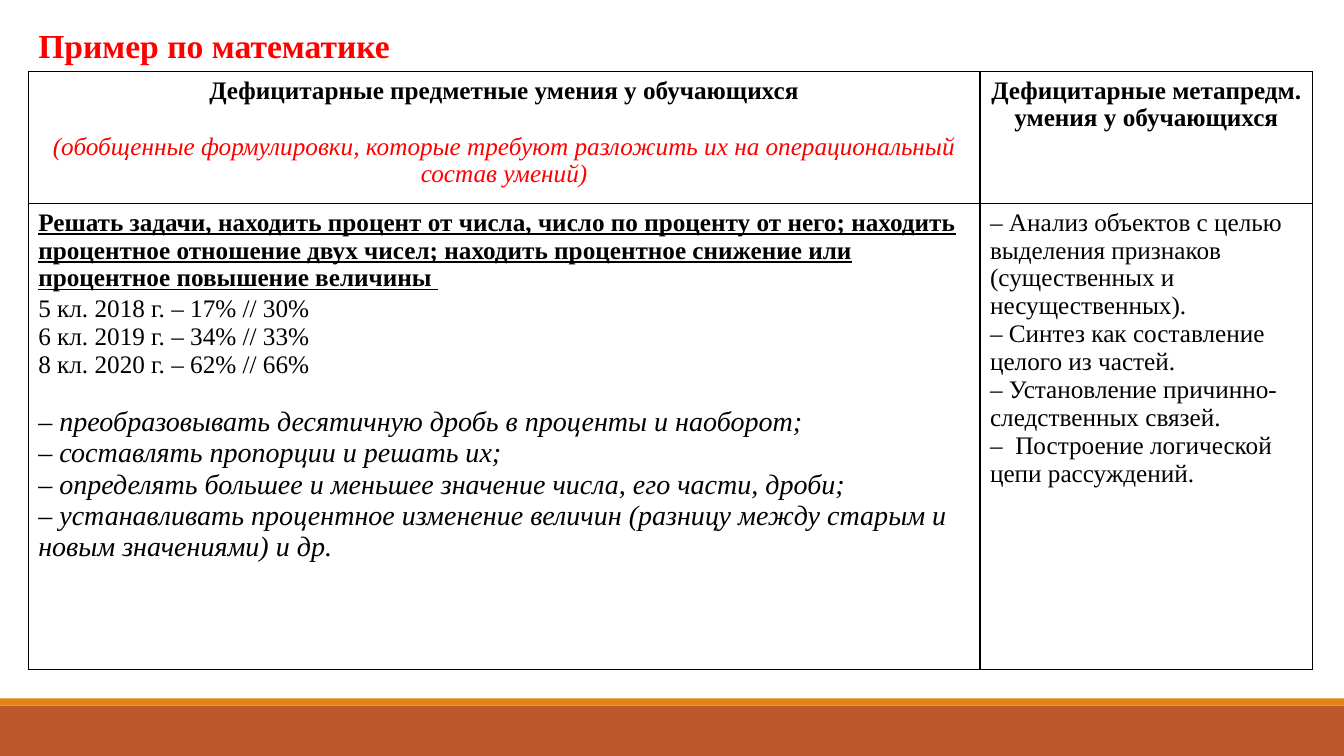
from lxml import etree
from pptx import Presentation
from pptx import util as u
from pptx.dml.color import RGBColor
from pptx.enum import shapes, text
from pptx.oxml.ns import qn

W, H = 13.33, 7.5
FONT = "Times New Roman"
TITLE = "Пример по математике"
BARS = [(7, 0.5, "BD582C"), (6.93, 0.07, "E48312")]
LEFT, TOP = 0.28, 0.71
COLS, ROWS = (9.44, 3.3), (1.31, 4.62)

HEAD = dict(bold=True, align="CENTER")
NOTE = dict(italic=True, color="FF0000", align="CENTER", before=20)
SKILL = dict(bold=True, underline=True)
STEP = dict(size=20, italic=True)
CELLS = [
    [
        [("Дефицитарные предметные умения у обучающихся", HEAD),
         ("(обобщенные формулировки, которые требуют разложить их на "
          "операциональный состав умений)", NOTE)],
        [("Дефицитарные метапредм. умения у обучающихся", HEAD)],
    ],
    [
        [("Решать задачи, находить процент от числа, число по проценту от него; "
          "находить процентное отношение двух чисел; находить процентное снижение "
          "или процентное повышение величины ", SKILL),
         ("5 кл. 2018 г. – 17% // 30%", dict(before=2)),
         ("6 кл. 2019 г. – 34% // 33%", {}),
         ("8 кл. 2020 г. – 62% // 66%", {}),
         ("– преобразовывать десятичную дробь в проценты и наоборот;",
          dict(STEP, before=20)),
         ("– составлять пропорции и решать их;", STEP),
         ("– определять большее и меньшее значение числа, его части, дроби;", STEP),
         ("– устанавливать процентное изменение величин (разницу между старым и "
          "новым значениями) и др.", STEP)],
        [("– Анализ объектов с целью выделения признаков (существенных и "
          "несущественных).", {}),
         ("– Синтез как составление целого из частей.", {}),
         ("– Установление причинно-следственных связей.", {}),
         ("–  Построение логической цепи рассуждений.", {})],
    ],
]


def rgb(value):
    return RGBColor.from_string(value)


def write(p, words, size=18, color="000000", bold=False, italic=False,
          underline=False, align="LEFT", before=0):
    p.alignment = text.PP_ALIGN[align]
    p.space_before = u.Pt(before)
    r = p.add_run()
    r.text = words
    f = r.font
    f.name, f.size, f.color.rgb = FONT, u.Pt(size), rgb(color)
    f.bold, f.italic, f.underline = bold, italic, underline


def border(cell, color="000000", width=1):
    pr = cell._tc.get_or_add_tcPr()
    for i, side in enumerate(("lnL", "lnR", "lnT", "lnB")):
        ln = etree.Element(qn("a:" + side), w=str(u.Pt(width)))
        fill = etree.SubElement(ln, qn("a:solidFill"))
        etree.SubElement(fill, qn("a:srgbClr"), val=color)
        pr.insert(i, ln)


def main():
    prs = Presentation()
    prs.slide_width, prs.slide_height = u.Inches(W), u.Inches(H)
    s = prs.slides.add_slide(prs.slide_layouts[5])

    for top, height, color in BARS:
        sp = s.shapes.add_shape(shapes.MSO_SHAPE.RECTANGLE, 0, u.Inches(top),
                                u.Inches(W), u.Inches(height))
        sp.shadow.inherit = False
        sp.fill.solid()
        sp.fill.fore_color.rgb = rgb(color)
        sp.line.fill.background()

    title = s.shapes.title
    title.left, title.top = u.Inches(LEFT), u.Inches(0.2)
    title.width, title.height = u.Inches(3.72), u.Inches(0.5)
    tf = title.text_frame
    tf.auto_size, tf.word_wrap = text.MSO_AUTO_SIZE.NONE, False
    write(tf.paragraphs[0], TITLE, size=24, color="FF0000", bold=True)

    table = s.shapes.add_table(len(ROWS), len(COLS), u.Inches(LEFT), u.Inches(TOP),
                               u.Inches(sum(COLS)), u.Inches(sum(ROWS))).table
    for col, width in zip(table.columns, COLS):
        col.width = u.Inches(width)
    for row, height, contents in zip(table.rows, ROWS, CELLS):
        row.height = u.Inches(height)
        for cell, lines in zip(row.cells, contents):
            cell.fill.background()
            border(cell)
            tf = cell.text_frame
            for i, (words, style) in enumerate(lines):
                p = tf.add_paragraph() if i else tf.paragraphs[0]
                write(p, words, **style)

    prs.save("out.pptx")


if __name__ == "__main__":
    main()
